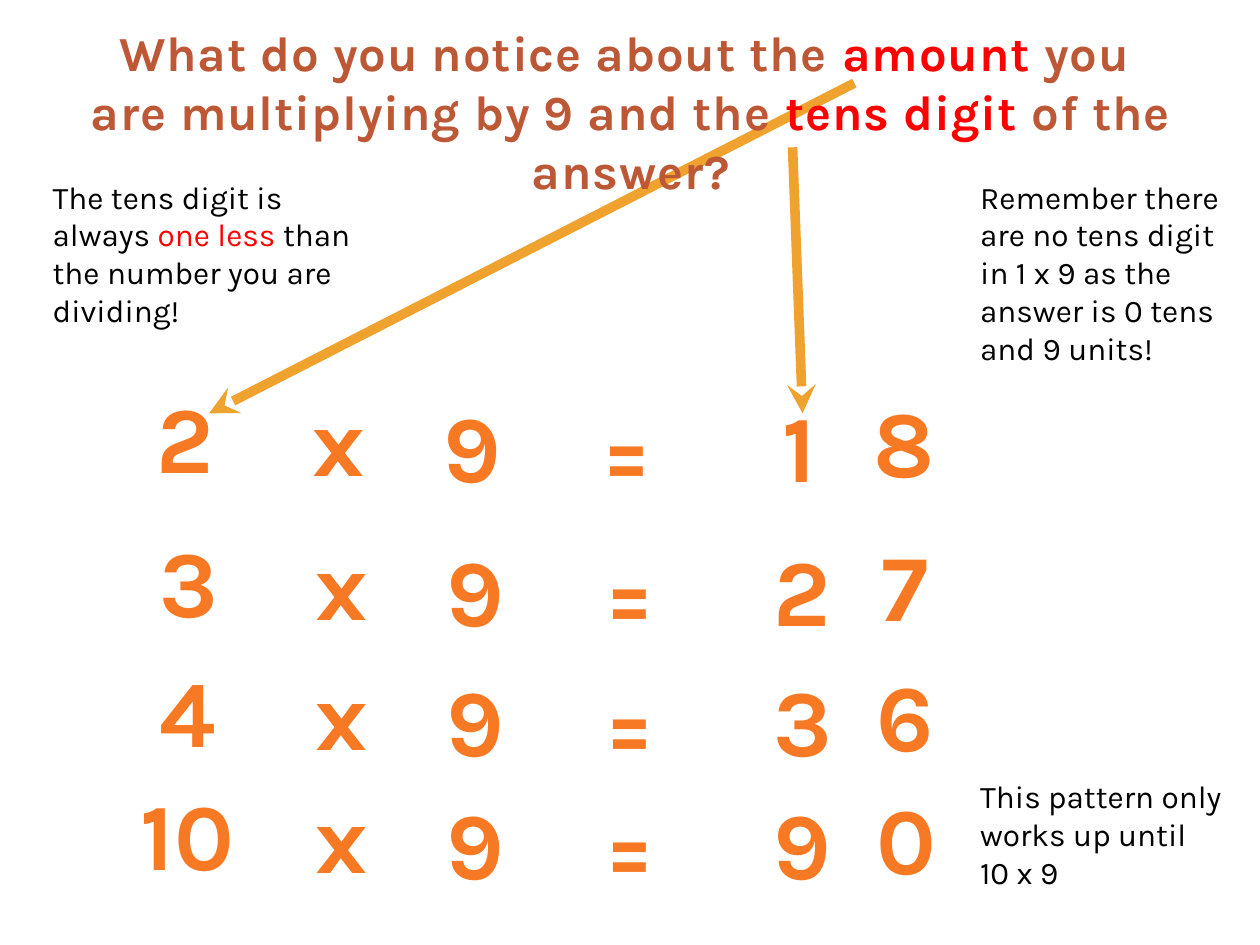
"""Build a slide on the tens-digit pattern in the nine times table."""
from lxml import etree
from pptx import Presentation
from pptx.dml.color import RGBColor
from pptx.enum.shapes import MSO_CONNECTOR
from pptx.enum.text import MSO_ANCHOR, MSO_AUTO_SIZE, PP_ALIGN
from pptx.oxml.ns import qn
from pptx.util import Pt

STRAIGHT = MSO_CONNECTOR.STRAIGHT
TOP = MSO_ANCHOR.TOP
GROW, FIXED = MSO_AUTO_SIZE.SHAPE_TO_FIT_TEXT, MSO_AUTO_SIZE.NONE
LEFT, CENTER = PP_ALIGN.LEFT, PP_ALIGN.CENTER

FONT = "Karla"
BROWN = RGBColor(0xBD, 0x58, 0x36)
ORANGE = RGBColor(0xF8, 0x79, 0x24)
AMBER = RGBColor(0xF0, 0xA2, 0x2E)
RED = RGBColor(0xFF, 0x00, 0x00)
BLACK = RGBColor(0x00, 0x00, 0x00)

TITLE = [
    [("What do you notice about the ", BROWN), ("amount", RED), (" you ", BROWN)],
    [("are multiplying by 9 and the ", BROWN), ("tens digit ", RED),
     ("of the answer?", BROWN)],
]
TITLE_AREA = (23.8, 9.4, 673.2, 74.9)

NOTES = [
    ((553, 97.9, 153.4, 116.6),
     [[("Remember there are no tens digit in 1 x 9 as the answer is 0 tens "
        "and 9 units!", BLACK)]]),
    ((23, 97.9, 193, 94.3),
     [[("The tens digit is always ", BLACK), ("one less ", RED),
       ("than the number you are dividing!", BLACK)]]),
    ((553, 440.6, 153.4, 72.7),
     [[("This pattern only works up until", BLACK)], [("10 x 9", BLACK)]]),
]

SUMS = [
    (105.5, 213.1, ["2", "x", "9", "=", "1", "8"]),
    (107.2, 295.2, ["3", "x", "9", "=", "2", "7"]),
    (107.2, 369.5, ["4", "x", "9", "=", "3", "6"]),
    (107.2, 439.8, ["10", "x", "9", "=", "9", "0"]),
]
COLUMN_OFFSETS = [(0, 0), (88.2, 1.7), (164.4, 5), (252.7, 6.5), (351.3, 5), (409.8, 2.2)]
GLYPH_WIDTHS = {1: 46.8, 2: 77}
GLYPH_HEIGHT = 72.7

AMOUNT_ARROW = (488.2, 47.5, 119.5, 236.2)
TENS_ARROW = (452.9, 84.2, 458.6, 236.2)


def write_text(shape, paragraphs, size, align, bold=False, wrap=True, fit=GROW):
    frame = shape.text_frame
    frame.word_wrap = wrap
    frame.auto_size = fit
    frame.vertical_anchor = TOP
    for index, spans in enumerate(paragraphs):
        para = frame.add_paragraph() if index else frame.paragraphs[0]
        para.alignment = align
        para.font.name = FONT
        para.font.size = Pt(size)
        para.font.bold = bold
        for text, color in spans:
            span = para.add_run()
            span.text = text
            span.font.color.rgb = color


def add_box(page, area, paragraphs, size, align, **options):
    box = page.shapes.add_textbox(*map(Pt, area))
    write_text(box, paragraphs, size, align, **options)


def add_arrow(page, ends):
    arrow = page.shapes.add_connector(STRAIGHT, *map(Pt, ends))
    arrow.line.color.rgb = AMBER
    arrow.line.width = Pt(5.5)
    etree.SubElement(arrow.line._get_or_add_ln(), qn("a:tailEnd"), type="stealth")
    etree.SubElement(arrow.element.spPr, qn("a:effectLst"))
    return arrow


def add_title(page):
    title = page.shapes.title
    title.left, title.top, title.width, title.height = map(Pt, TITLE_AREA)
    write_text(title, TITLE, 28, CENTER, bold=True, fit=FIXED)
    for para in title.text_frame.paragraphs:
        for span in para.runs:
            span.font._element.set("spc", "50")
    return title


def add_sums(page):
    for first_center, row_top, glyphs in SUMS:
        for glyph, (across, down) in zip(glyphs, COLUMN_OFFSETS):
            width = GLYPH_WIDTHS[len(glyph)]
            area = (first_center + across - width / 2, row_top + down,
                    width, GLYPH_HEIGHT)
            add_box(page, area, [[(glyph, ORANGE)]], 54, CENTER,
                    bold=True, wrap=False)


def main():
    deck = Presentation()
    deck.slide_width, deck.slide_height = Pt(720), Pt(540)
    page = deck.slides.add_slide(deck.slide_layouts[5])
    title = add_title(page)
    title.element.addprevious(add_arrow(page, AMOUNT_ARROW).element)
    add_arrow(page, TENS_ARROW)
    for area, paragraphs in NOTES:
        add_box(page, area, paragraphs, 18, LEFT)
    add_sums(page)
    deck.save("out.pptx")


if __name__ == "__main__":
    main()
